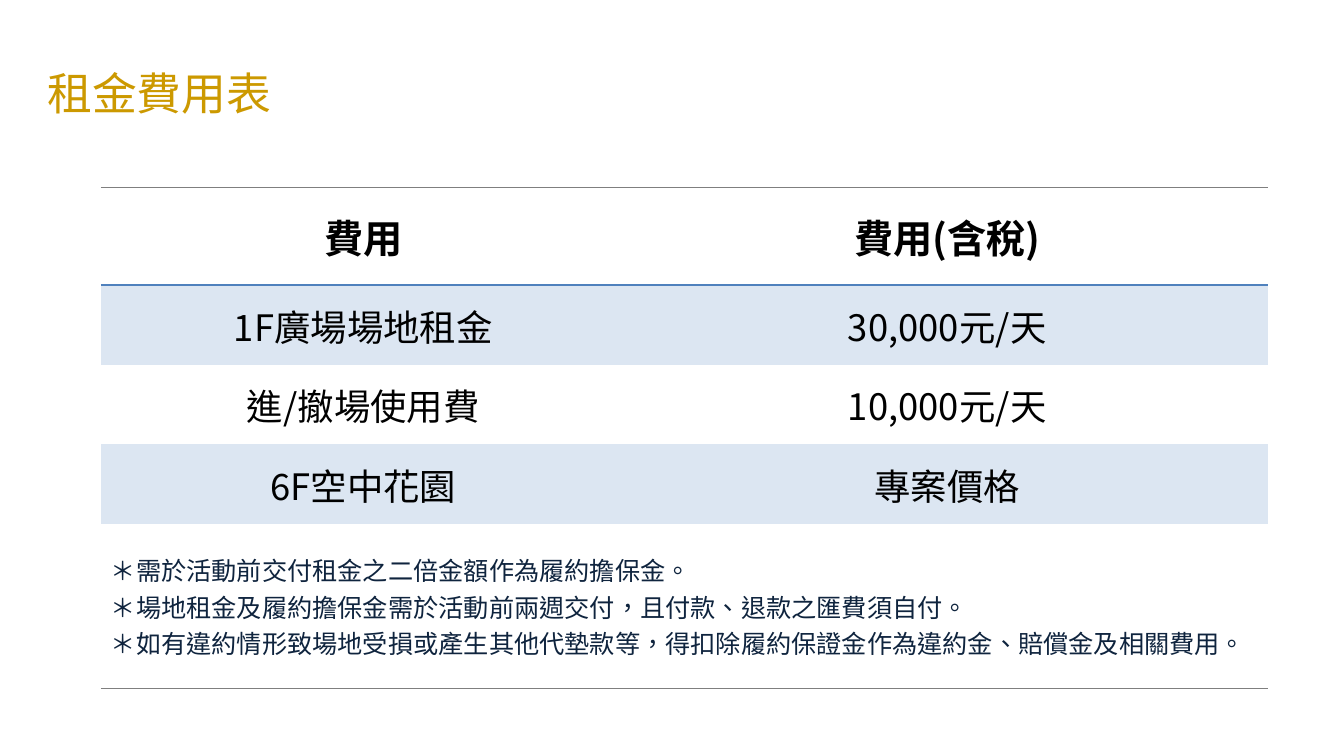
from lxml import etree
from pptx import Presentation
from pptx import util as u
from pptx.dml.color import RGBColor
from pptx.enum import lang, text
from pptx.oxml.ns import qn

TITLE_FONT = "Calibri"
TABLE_FONT = "Noto Sans CJK SC"
GOLD, BLACK, NAVY = "CC9900", "000000", "0F243E"
BLUE, PALE_BLUE, GRAY = "4F81BD", "DCE6F2", "7F7F7F"
NO_STYLE = "{2D5ABB26-0587-4C30-8999-92F81FD0307C}"

FEES = [
    ("費用", "費用(含稅)"),
    ("1F廣場場地租金", "30,000元/天"),
    ("進/撤場使用費", "10,000元/天"),
    ("6F空中花園", "專案價格"),
]
NOTES = [
    "＊需於活動前交付租金之二倍金額作為履約擔保金。",
    "＊場地租金及履約擔保金需於活動前兩週交付，且付款、退款之匯費須自付。",
    "＊如有違約情形致場地受損或產生其他代墊款等，得扣除履約保證金作為違約金、賠償金及相關費用。",
]
COLUMN_WIDTHS = [5.21, 6.37]
ROW_HEIGHTS = [0.97, 0.79, 0.79, 0.79, 1.63]


def rgb(color):
    return RGBColor.from_string(color)


def format_text(text_frame, font_name, size, color, bold=False, align=text.PP_ALIGN.LEFT):
    for paragraph in text_frame.paragraphs:
        paragraph.alignment = align
        for run in paragraph.runs:
            font = run.font
            font.name, font.size, font.bold = font_name, u.Pt(size), bold
            font.color.rgb = rgb(color)
            font.language_id = lang.MSO_LANGUAGE_ID.TRADITIONAL_CHINESE
            east_asian = etree.SubElement(font._element, qn("a:ea"))
            east_asian.set("typeface", font_name)


def add_border(cell, side, color, width):
    """Draw one cell edge; side is "T" or "B". Call before filling the cell."""
    properties = cell._tc.get_or_add_tcPr()
    line = etree.SubElement(properties, qn(f"a:ln{side}"), w=str(u.Pt(width)))
    fill = etree.SubElement(line, qn("a:solidFill"))
    etree.SubElement(fill, qn("a:srgbClr"), val=color)


def add_title(slide, title):
    box = slide.shapes.add_textbox(
        u.Inches(0.37), u.Inches(0.6), u.Inches(4.25), u.Inches(0.64))
    box.text_frame.word_wrap = True
    box.text_frame.text = title
    format_text(box.text_frame, TITLE_FONT, 32, GOLD)


def add_plain_table(slide, left, top):
    frame = slide.shapes.add_table(
        len(ROW_HEIGHTS), len(COLUMN_WIDTHS), u.Inches(left), u.Inches(top),
        u.Inches(sum(COLUMN_WIDTHS)), u.Inches(sum(ROW_HEIGHTS)))
    table = frame.table
    table.first_row = table.horz_banding = False
    table._tbl.tblPr.find(qn("a:tableStyleId")).text = NO_STYLE
    for column, width in zip(table.columns, COLUMN_WIDTHS):
        column.width = u.Inches(width)
    for row, height in zip(table.rows, ROW_HEIGHTS):
        row.height = u.Inches(height)
    return table


def fill_fees(table):
    for row, fees in enumerate(FEES):
        header = row == 0
        for column, label in enumerate(fees):
            cell = table.cell(row, column)
            cell.text_frame.text = label
            format_text(cell.text_frame, TABLE_FONT, 28 if header else 26, BLACK,
                        bold=header, align=text.PP_ALIGN.CENTER)
            cell.vertical_anchor = text.MSO_ANCHOR.MIDDLE
            if header:
                add_border(cell, "T", GRAY, 0.75)
                add_border(cell, "B", BLUE, 1.5)
            if row % 2:
                cell.fill.solid()
                cell.fill.fore_color.rgb = rgb(PALE_BLUE)
            else:
                cell.fill.background()


def fill_notes(table):
    last_row = len(FEES)
    notes, spanned = table.cell(last_row, 0), table.cell(last_row, 1)
    notes.merge(spanned)
    notes.text_frame.text = "\n".join(NOTES)
    format_text(notes.text_frame, TABLE_FONT, 18, NAVY)
    notes.vertical_anchor = text.MSO_ANCHOR.MIDDLE
    for cell in (notes, spanned):
        add_border(cell, "B", GRAY, 0.75)
        cell.fill.background()


def main():
    presentation = Presentation()
    presentation.slide_width = u.Inches(13.33)
    presentation.slide_height = u.Inches(7.5)
    slide = presentation.slides.add_slide(presentation.slide_layouts[6])
    add_title(slide, "租金費用表")
    table = add_plain_table(slide, 1, 1.86)
    fill_fees(table)
    fill_notes(table)
    presentation.save("out.pptx")


if __name__ == "__main__":
    main()
